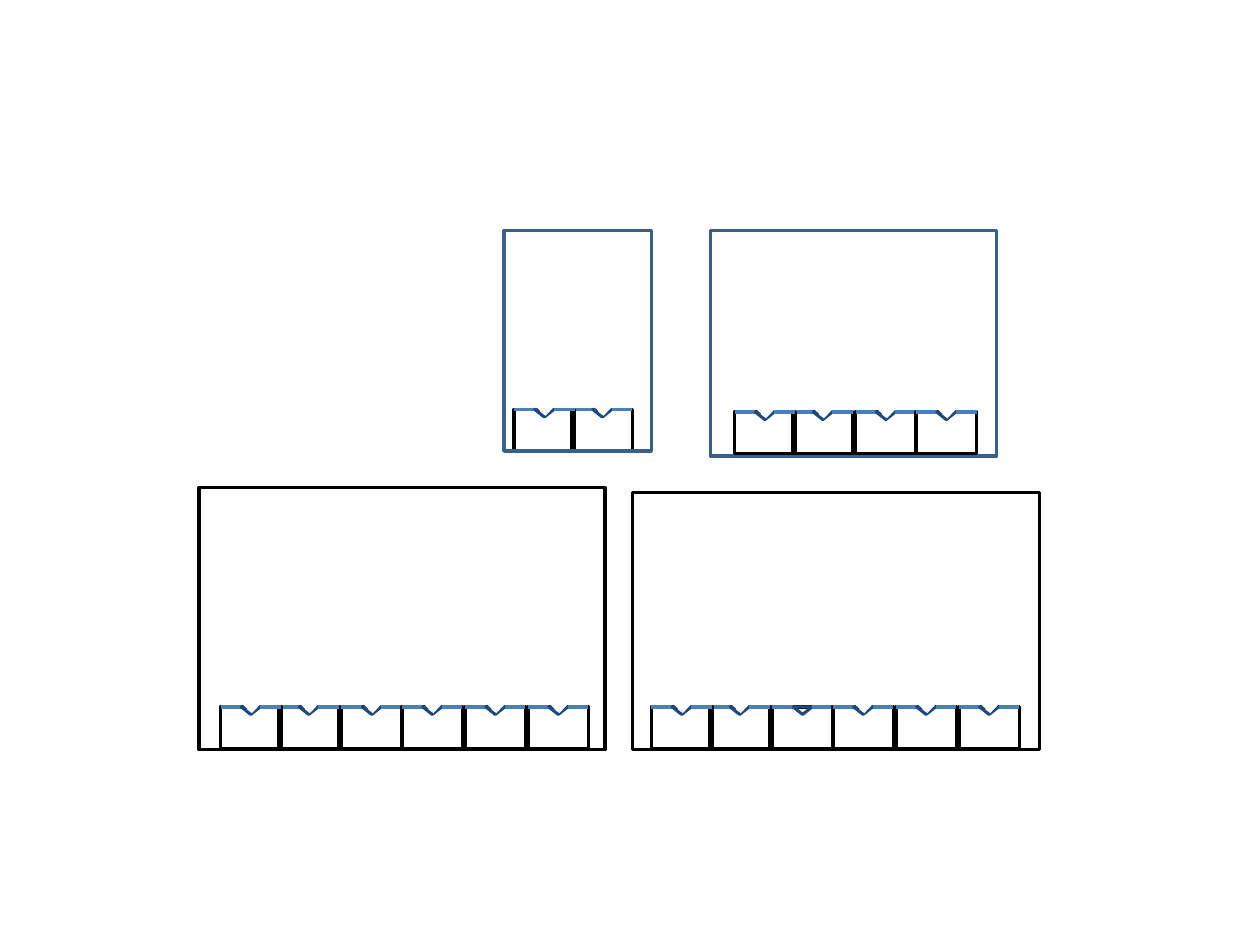
import pptx
import pptx.dml.color
import pptx.enum.shapes
import pptx.oxml.ns
import pptx.util
from lxml import etree

Inches = pptx.util.Inches
RGBColor = pptx.dml.color.RGBColor
Preset = pptx.enum.shapes.MSO_SHAPE

BLACK = RGBColor(0x00, 0x00, 0x00)
WHITE = RGBColor(0xFF, 0xFF, 0xFF)
FRAME_BLUE = RGBColor(0x3A, 0x5F, 0x8C)
TOP_BLUE = RGBColor(0x4B, 0x7E, 0xBC)
NOTCH_BLUE = RGBColor(0x1F, 0x49, 0x7D)

# One bin: a box with a V-shaped notch in the middle of its top edge
BIN_W, BIN_H = 0.48, 0.33
NOTCH_W, NOTCH_H = 0.15, 0.06
MASK_W, MASK_H, MASK_RISE = 0.16, 0.08, 0.03
SHOULDER = (BIN_W - NOTCH_W) / 2

# Bin offsets from the first bin of a row, from back to front
BIN_OFFSETS = {2: 0.96, 3: 1.44, 1: 0.46, 4: 1.94, 0: 0, 5: 2.44}


def add_outline(shapes, preset, box, line=None, weight=2, fill=None):
    shape = shapes.add_shape(preset, *(Inches(length) for length in box))
    shape.shadow.inherit = False
    if fill is None:
        shape.fill.background()
    else:
        shape.fill.solid()
        shape.fill.fore_color.rgb = fill
    if line is None:
        shape.line.fill.background()
    else:
        shape.line.color.rgb = line
        shape.line.width = pptx.util.Pt(weight)
    return shape


def add_top_edge(shapes, left, right, y):
    edge = shapes.add_connector(
        pptx.enum.shapes.MSO_CONNECTOR.STRAIGHT,
        Inches(left), Inches(y), Inches(right), Inches(y))
    edge.line.color.rgb = TOP_BLUE
    edge.line.width = pptx.util.Pt(2)
    etree.SubElement(edge._element.spPr, pptx.oxml.ns.qn("a:effectLst"))


def add_bin(slide, left, top, open_notch=True):
    parts = slide.shapes.add_group_shape().shapes
    notch_left = left + SHOULDER
    notch_right = notch_left + NOTCH_W
    add_outline(parts, Preset.RECTANGLE, (left, top, BIN_W, BIN_H), BLACK)
    add_top_edge(parts, left, notch_left, top)
    notch = add_outline(parts, Preset.ISOSCELES_TRIANGLE,
                        (notch_left, top, NOTCH_W, NOTCH_H), NOTCH_BLUE, 1.75)
    notch.rotation = 180
    add_top_edge(parts, notch_right, left + BIN_W, top)
    # A white triangle hides the top edge over the notch
    if open_notch:
        mask = add_outline(parts, Preset.ISOSCELES_TRIANGLE,
                           (notch_left, top - MASK_RISE, MASK_W, MASK_H), fill=WHITE)
        mask.rotation = 180
        mask.adjustments[0] = 0.48


def add_bin_row(slide, left, top, count, closed=None):
    for index, offset in BIN_OFFSETS.items():
        if index < count:
            add_bin(slide, left + offset, top, open_notch=index != closed)


def add_frame(slide, box, color):
    add_outline(slide.shapes, Preset.RECTANGLE, box, color)


def main():
    prs = pptx.Presentation()
    prs.slide_width, prs.slide_height = Inches(10), Inches(7.5)
    slide = prs.slides.add_slide(prs.slide_layouts[6])

    # Lower right: six bins, the third one with a closed notch
    add_frame(slide, (5.02, 3.91, 3.23, 2.04), BLACK)
    add_bin_row(slide, 5.17, 5.61, 6, closed=2)

    # Lower left: six bins
    add_frame(slide, (1.58, 3.87, 3.22, 2.08), BLACK)
    add_bin_row(slide, 1.75, 5.61, 6)

    # Upper right: four bins
    add_frame(slide, (5.64, 1.83, 2.27, 1.79), FRAME_BLUE)
    add_bin_row(slide, 5.83, 3.27, 4)

    # Upper middle: two bins, with the frame in front
    add_bin_row(slide, 4.08, 3.25, 2)
    add_frame(slide, (4, 1.83, 1.17, 1.75), FRAME_BLUE)

    prs.save("out.pptx")


if __name__ == "__main__":
    main()
